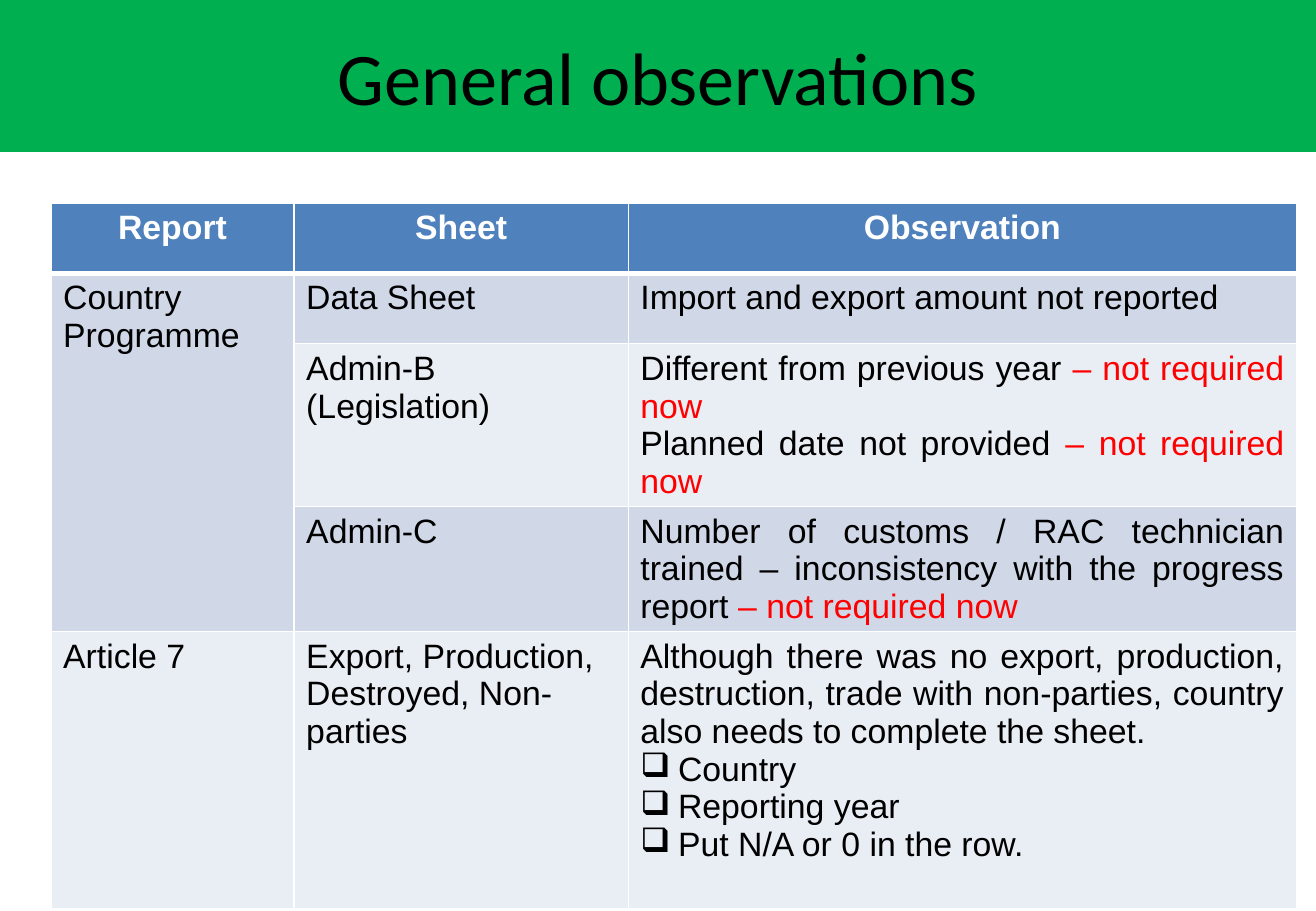
from pptx import Presentation
from pptx.dml.color import RGBColor
from pptx.enum.text import MSO_ANCHOR, PP_ALIGN
from pptx.oxml import parse_xml
from pptx.oxml.ns import nsdecls
from pptx.util import Inches, Pt

GREEN = RGBColor(0x00, 0xB0, 0x50)
BLUE = RGBColor(0x4F, 0x81, 0xBD)
BAND_DARK = RGBColor(0xD0, 0xD8, 0xE8)
BAND_LIGHT = RGBColor(0xE9, 0xED, 0xF4)
BLACK = RGBColor(0, 0, 0)
WHITE = RGBColor(0xFF, 0xFF, 0xFF)
RED = RGBColor(0xFF, 0, 0)

NOT_REQUIRED = "– not required now"
BULLET = "❑"
COLUMNS = [2, 2.75, 5.5]
ROWS = [0.58, 0.58, 0.84, 0.84, 2.28]
BANDS = [BLUE, BAND_DARK, BAND_LIGHT, BAND_DARK, BAND_LIGHT]
CELLS = [
    [["Report"], ["Sheet"], ["Observation"]],
    [["Country Programme"], ["Data Sheet"],
     ["Import and export amount not reported"]],
    [None, ["Admin-B (Legislation)"],
     ["Different from previous year " + NOT_REQUIRED,
      "Planned date not provided " + NOT_REQUIRED]],
    [None, ["Admin-C"],
     ["Number of customs / RAC technician trained – inconsistency with the "
      "progress report " + NOT_REQUIRED]],
    [["Article 7"], ["Export, Production, Destroyed, Non-parties"],
     ["Although there was no export, production, destruction, trade with "
      "non-parties, country also needs to complete the sheet.",
      BULLET + "Country", BULLET + "Reporting year",
      BULLET + "Put N/A or 0 in the row."]],
]


def add_title(s, text, left, top, width, height):
    sp = s.shapes.title
    sp.left, sp.top, sp.width, sp.height = map(Inches, (left, top, width, height))
    sp.fill.solid()
    sp.fill.fore_color.rgb = GREEN
    tf = sp.text_frame
    tf.text = text
    tf.vertical_anchor = MSO_ANCHOR.MIDDLE
    p = tf.paragraphs[0]
    p.alignment = PP_ALIGN.CENTER
    p.font.name, p.font.size = "Calibri", Pt(44)
    p.font.color.rgb = BLACK


def set_borders(cell, row):
    tc_pr = cell._tc.get_or_add_tcPr()
    for i, side in enumerate("LRTB"):
        thick = (row, side) in ((0, "B"), (1, "T"))
        tc_pr.insert(i, parse_xml(
            f'<a:ln{side} {nsdecls("a")} w="{Pt(3 if thick else 1)}"><a:solidFill>'
            f'<a:srgbClr val="{WHITE}"/></a:solidFill></a:ln{side}>'))


def add_bullet(p):
    p_pr = p._p.get_or_add_pPr()
    p_pr.set("marL", str(Inches(0.31)))
    p_pr.set("indent", str(-Inches(0.31)))
    p_pr.append(parse_xml(f'<a:buChar {nsdecls("a")} char="{BULLET}"/>'))


def write_paragraph(p, text, header, alignment):
    if text.startswith(BULLET):
        add_bullet(p)
        text = text.removeprefix(BULLET)
    p.alignment = alignment
    p.font.name, p.font.size, p.font.bold = "Arial", Pt(20), header
    remark, note, _ = text.partition(NOT_REQUIRED)
    for part, color in ((remark, WHITE if header else BLACK), (note, RED)):
        if part:
            r = p.add_run()
            r.text = part
            r.font.name, r.font.size, r.font.bold = "Arial", Pt(20), header
            r.font.color.rgb = color


def write_cell(cell, paragraphs, header, alignment):
    tf = cell.text_frame
    for i, text in enumerate(paragraphs):
        p = tf.add_paragraph() if i else tf.paragraphs[0]
        write_paragraph(p, text, header, alignment)


def add_observations(s, left, top, width, height):
    frame = s.shapes.add_table(len(ROWS), len(COLUMNS),
                               *map(Inches, (left, top, width, height)))
    table = frame.table
    for column, size in zip(table.columns, COLUMNS):
        column.width = Inches(size)
    for row, size in zip(table.rows, ROWS):
        row.height = Inches(size)
    frame.height = Inches(height)
    table.cell(1, 0).merge(table.cell(3, 0))
    for i, contents in enumerate(CELLS):
        for j, paragraphs in enumerate(contents):
            cell = table.cell(i, j)
            cell.fill.solid()
            cell.fill.fore_color.rgb = BANDS[i]
            set_borders(cell, i)
            alignment = PP_ALIGN.CENTER if i == 0 else PP_ALIGN.JUSTIFY
            if (i, j) == (4, 1):
                alignment = PP_ALIGN.LEFT
            if paragraphs:
                write_cell(cell, paragraphs, i == 0, alignment)


def main():
    prs = Presentation()
    prs.slide_width, prs.slide_height = Inches(10.83), Inches(7.5)
    s = prs.slides.add_slide(prs.slide_layouts[5])
    add_title(s, "General observations", 0, 0, 10.83, 1.25)
    add_observations(s, 0.42, 1.67, 10.25, 5.64)
    prs.save("out.pptx")


if __name__ == "__main__":
    main()
